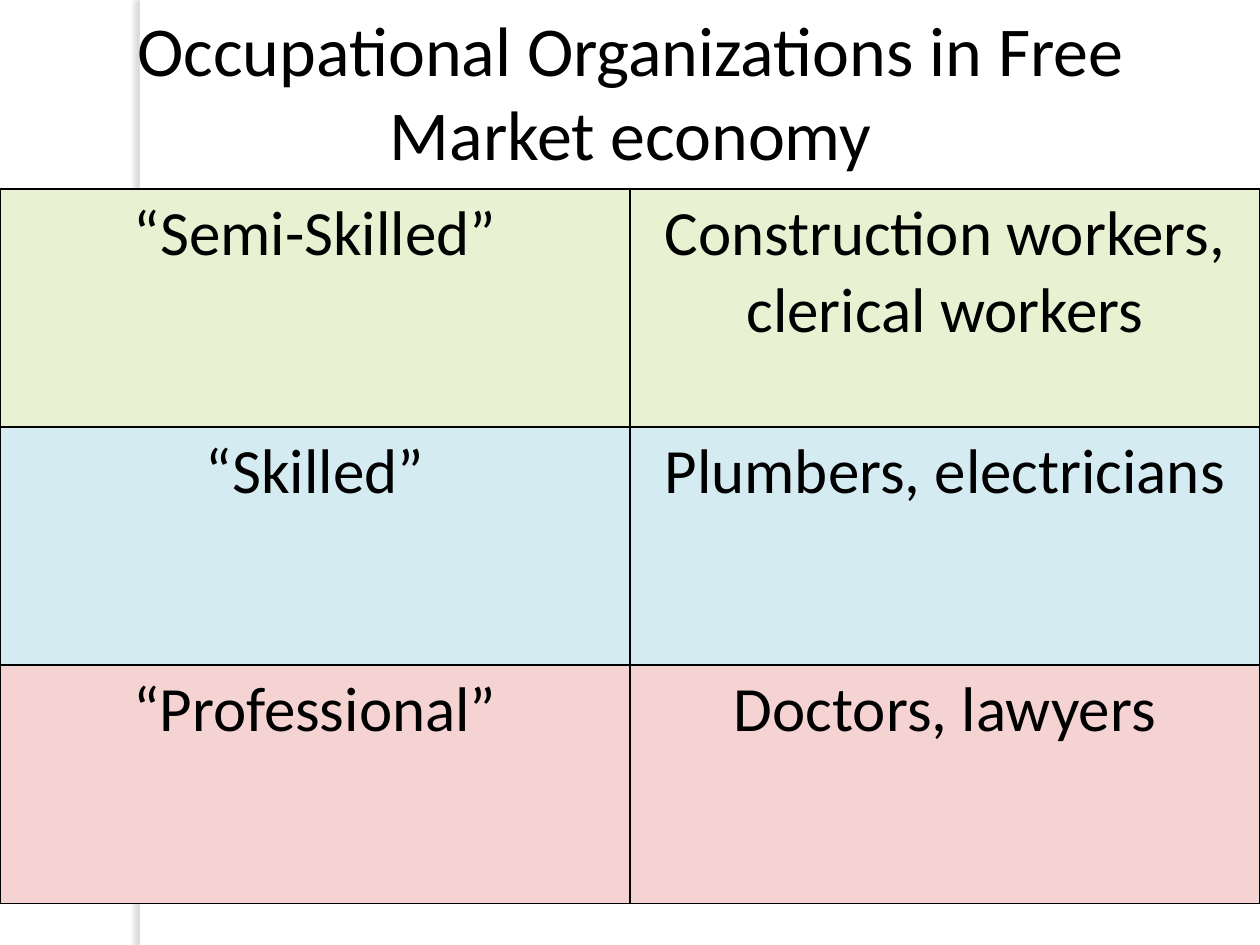
from lxml import etree
from pptx import Presentation
from pptx.dml.color import RGBColor
from pptx.enum.shapes import MSO_SHAPE
from pptx.enum.text import PP_ALIGN
from pptx.oxml import parse_xml
from pptx.oxml.ns import nsdecls, qn
from pptx.util import Inches, Pt

RECTANGLE = MSO_SHAPE.RECTANGLE
CENTER = PP_ALIGN.CENTER
FONT = "Calibri"
BLACK = RGBColor(0x00, 0x00, 0x00)
WHITE = RGBColor(0xFF, 0xFF, 0xFF)
GREEN = RGBColor(0xE8, 0xF2, 0xD3)
BLUE = RGBColor(0xD4, 0xEB, 0xF1)
PINK = RGBColor(0xF5, 0xD3, 0xD3)
SHADOW = RGBColor(0x73, 0x6F, 0x63)

TITLE = "Occupational Organizations in Free Market economy"
ROWS = [
    (GREEN, "“Semi-Skilled”", "Construction workers, clerical workers"),
    (BLUE, "“Skilled”", "Plumbers, electricians"),
    (PINK, "“Professional”", "Doctors, lawyers"),
]
COLUMN_WIDTH = 5
ROW_HEIGHT = 1.89
BORDER_SIDES = ("a:lnL", "a:lnR", "a:lnT", "a:lnB")


def write_centered(text_frame, text, size):
    text_frame.word_wrap = True
    paragraph = text_frame.paragraphs[0]
    paragraph.alignment = CENTER
    run = paragraph.add_run()
    run.text = text
    run.font.name = FONT
    run.font.size = Pt(size)
    run.font.color.rgb = BLACK


def add_side_strip(slide):
    strip = slide.shapes.add_shape(
        RECTANGLE, Inches(1.11), 0, Inches(0.08), Inches(7.5))
    strip.fill.solid()
    strip.fill.fore_color.rgb = WHITE
    strip.line.fill.background()
    strip.shadow.inherit = False
    effects = strip._element.spPr.find(qn("a:effectLst"))
    effects.append(parse_xml(
        f'<a:outerShdw {nsdecls("a")} blurRad="{Pt(3)}" dist="{Pt(3)}" '
        f'dir="{180 * 60000}" algn="tl" rotWithShape="0">'
        f'<a:srgbClr val="{SHADOW}"><a:alpha val="25000"/></a:srgbClr>'
        '</a:outerShdw>'))


def add_borders(cell):
    properties = cell._tc.get_or_add_tcPr()
    for index, side in enumerate(BORDER_SIDES):
        line = etree.Element(qn(side), w=str(Pt(1)))
        fill = etree.SubElement(line, qn("a:solidFill"))
        etree.SubElement(fill, qn("a:srgbClr"), val=str(BLACK))
        properties.insert(index, line)


def add_worker_table(slide):
    table = slide.shapes.add_table(
        len(ROWS), 2, 0, Inches(1.5),
        Inches(2 * COLUMN_WIDTH), Inches(len(ROWS) * ROW_HEIGHT)).table
    table.first_row = False
    table.horz_banding = False
    for column in table.columns:
        column.width = Inches(COLUMN_WIDTH)
    for row, (color, *texts) in zip(table.rows, ROWS):
        row.height = Inches(ROW_HEIGHT)
        for cell, text in zip(row.cells, texts):
            cell.fill.solid()
            cell.fill.fore_color.rgb = color
            write_centered(cell.text_frame, text, 36)
            add_borders(cell)


def main():
    presentation = Presentation()
    presentation.slide_width = Inches(10)
    presentation.slide_height = Inches(7.5)
    slide = presentation.slides.add_slide(presentation.slide_layouts[6])
    add_side_strip(slide)
    add_worker_table(slide)
    title = slide.shapes.add_textbox(
        Inches(0.17), 0, Inches(9.67), Inches(1.45))
    write_centered(title.text_frame, TITLE, 40)
    presentation.save("out.pptx")


if __name__ == "__main__":
    main()
